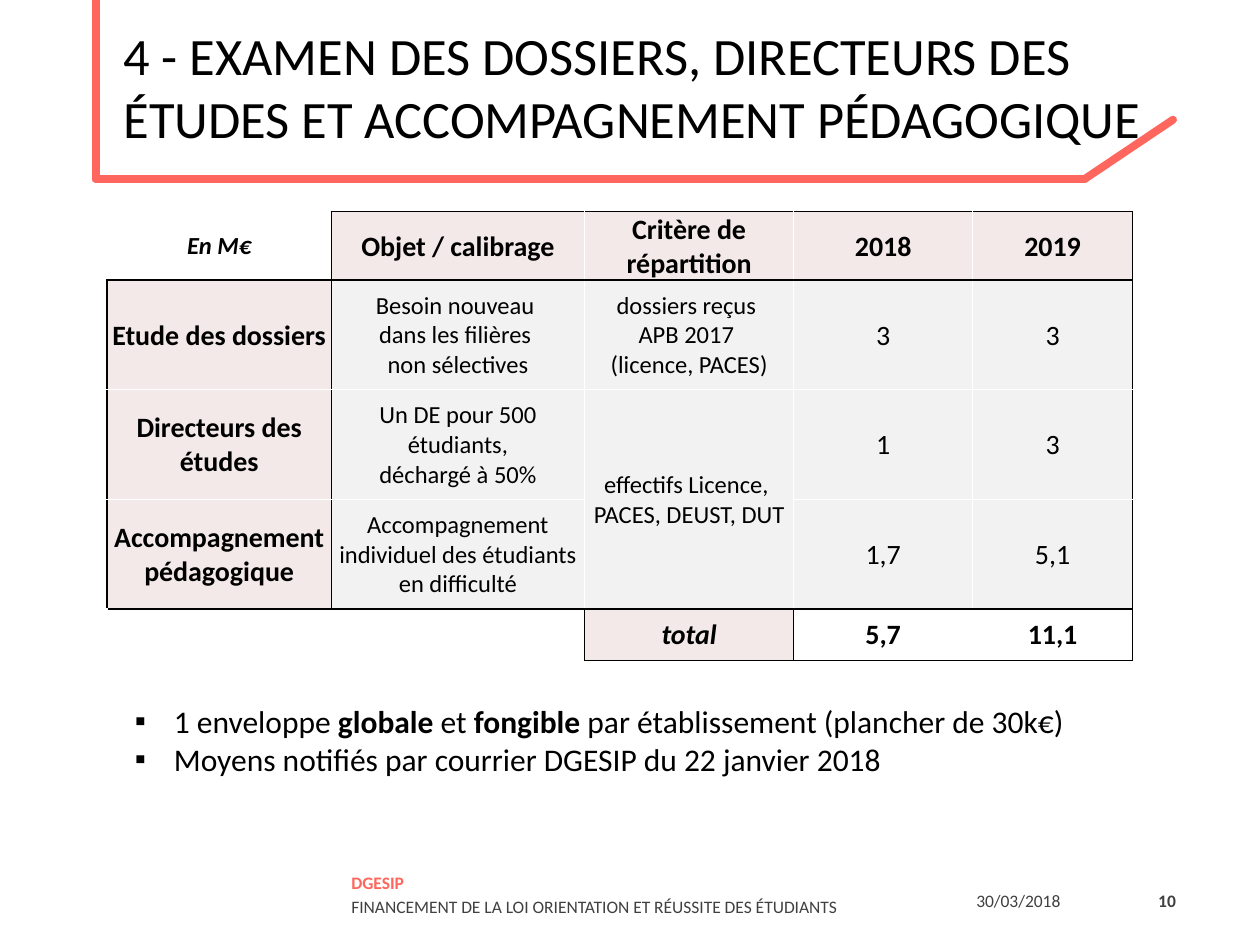
from lxml.etree import SubElement as Sub
from pptx import Presentation
from pptx.dml.color import RGBColor
from pptx.enum.shapes import MSO_CONNECTOR as Conn
from pptx.enum.text import MSO_ANCHOR as Anchor, MSO_AUTO_SIZE as Auto, PP_ALIGN as Align
from pptx.oxml.ns import qn
from pptx.util import Inches, Pt

CORAL = RGBColor(0xFF, 0x66, 0x5E)
BLACK = RGBColor(0, 0, 0)
WHITE = RGBColor(0xFF, 0xFF, 0xFF)
GREY = RGBColor(0x40, 0x40, 0x40)
ROSE = RGBColor(0xF4, 0xE9, 0xE9)
PALE = RGBColor(0xF2, 0xF2, 0xF2)

HEAD = {"size": Pt(16), "bold": True}
BODY = {"size": Pt(14), "bold": False}
NUM = {"size": Pt(16), "bold": False}
UNIT = {"size": Pt(14), "bold": True, "italic": True}
TOTAL = {"size": Pt(16), "bold": True, "italic": True}
LIST = {"size": Pt(18), "bold": False}
BOLD = {"size": Pt(18), "bold": True}
SMALL = {"size": Pt(10), "bold": False}
STRONG = {"size": Pt(10), "bold": True}

COLS = [1.78, 2.01, 1.66, 1.42, 1.27]
ROWS = [0.52, 0.87, 0.87, 0.87, 0.41]
DATA = [
    ["En M€", "Objet / calibrage", "Critère de répartition", "2018", "2019"],
    ["Etude des dossiers", "Besoin nouveau \ndans les filières \nnon sélectives",
     "dossiers reçus \nAPB 2017 \n(licence, PACES)", "3", "3"],
    ["Directeurs des études", "Un DE pour 500 étudiants,\ndéchargé à 50%",
     "effectifs Licence, \nPACES, DEUST, DUT", "1", "3"],
    ["Accompagnement pédagogique",
     "Accompagnement individuel des étudiants en difficulté", "", "1,7", "5,1"],
    ["", "", "total", "5,7", "11,1"],
]
HORIZ = ["01111", "11111", "00000", "00000", "11111", "00111"]
VERT = ["010001", "110001", "110001", "110001", "001101"]


def place(item, left, top, width, height):
    box = {"left": left, "top": top, "width": width, "height": height}
    for key, val in box.items():
        setattr(item, key, Inches(val))


def write(para, text, form, color=BLACK):
    run = para.add_run()
    run.text = text
    for key, val in {"name": "Calibri", **form}.items():
        setattr(run.font, key, val)
    run.font.color.rgb = color


def line(slide, start, end):
    bar = slide.shapes.add_connector(Conn.STRAIGHT, *map(Inches, start + end))
    bar.line.color.rgb = CORAL
    bar.line.width = Pt(4.5)
    bar.line._get_or_add_ln().set("cap", "rnd")
    Sub(bar._element.spPr, qn("a:effectLst"))


def title(slide, text):
    item = slide.shapes.title
    place(item, 0.88, 0.16, 8.62, 1.04)
    frame = item.text_frame
    frame.auto_size = Auto.NONE
    frame.vertical_anchor = Anchor.MIDDLE
    para = frame.paragraphs[0]
    para.alignment = Align.LEFT
    para.space_after = Pt(12)
    write(para, text, {"size": Pt(30)})


def bullets(slide, items):
    item = slide.placeholders[1]
    place(item, 0.97, 5.52, 7.78, 0.71)
    frame = item.text_frame
    frame.auto_size = Auto.SHAPE_TO_FIT_TEXT
    for num, runs in enumerate(items):
        para = frame.add_paragraph() if num else frame.paragraphs[0]
        para.space_before = Pt(0)
        props = para._p.get_or_add_pPr()
        props.set("marL", str(Inches(0.31)))
        props.set("indent", str(Inches(-0.31)))
        Sub(props, qn("a:buChar"), char="▪")
        for text, form in runs:
            write(para, text, form)


def label(slide, spot, rows, align=Align.LEFT, pitch=None):
    frame = slide.shapes.add_textbox(*map(Inches, spot)).text_frame
    frame.word_wrap = True
    frame.vertical_anchor = Anchor.MIDDLE
    for num, (text, form, color) in enumerate(rows):
        para = frame.add_paragraph() if num else frame.paragraphs[0]
        para.alignment = align
        para.line_spacing = pitch
        write(para, text, form, color)


def border(cell, row, col):
    end = row + (cell.span_height if cell.is_merge_origin else 1)
    last = col + (cell.span_width if cell.is_merge_origin else 1)
    sides = {"L": VERT[row][col], "R": VERT[row][last],
             "T": HORIZ[row][col], "B": HORIZ[end][col]}
    props = cell._tc.get_or_add_tcPr()
    for side, dark in sides.items():
        edge = Sub(props, qn("a:ln" + side), w=str(Pt(1)))
        fill = Sub(edge, qn("a:solidFill"))
        Sub(fill, qn("a:srgbClr"), val=str(BLACK if dark == "1" else WHITE))


def style(row, col):
    if (row, col) == (0, 0):
        return UNIT, WHITE
    if row == 4:
        return (TOTAL, ROSE) if col == 2 else (HEAD, WHITE)
    if row == 0 or col == 0:
        return HEAD, ROSE
    return (BODY if col < 3 else NUM), PALE


def fill_cell(cell, text, row, col):
    form, color = style(row, col)
    if not cell.is_spanned:
        border(cell, row, col)
    cell.fill.solid()
    cell.fill.fore_color.rgb = color
    look = {"margin_left": Inches(0.01), "margin_right": Inches(0.01),
            "margin_top": Inches(0.01), "margin_bottom": 0,
            "vertical_anchor": Anchor.MIDDLE}
    for key, val in look.items():
        setattr(cell, key, val)
    if not text:
        return
    frame = cell.text_frame
    for num, part in enumerate(text.split("\n")):
        para = frame.add_paragraph() if num else frame.paragraphs[0]
        para.alignment = Align.CENTER
        write(para, part, form)


def budget(slide):
    spot = map(Inches, (0.85, 1.68, sum(COLS), sum(ROWS)))
    table = slide.shapes.add_table(len(ROWS), len(COLS), *spot).table
    table.first_row = table.horz_banding = False
    for col, width in zip(table.columns, COLS):
        col.width = Inches(width)
    for row, height in zip(table.rows, ROWS):
        row.height = Inches(height)
    table.cell(2, 2).merge(table.cell(3, 2))
    table.cell(4, 0).merge(table.cell(4, 1))
    for row, texts in enumerate(DATA):
        for col, text in enumerate(texts):
            fill_cell(table.cell(row, col), text, row, col)


def main():
    deck = Presentation()
    deck.slide_width, deck.slide_height = Inches(10), Inches(7.5)
    slide = deck.slides.add_slide(deck.slide_layouts[1])
    path = [(0.76, 0), (0.76, 1.42), (8.61, 1.42), (9.31, 0.95)]
    for start, end in zip(path, path[1:]):
        line(slide, start, end)
    title(slide, "4 - EXAMEN DES DOSSIERS, DIRECTEURS DES ÉTUDES "
                 "ET ACCOMPAGNEMENT PÉDAGOGIQUE")
    budget(slide)
    bullets(slide, [
        [("1 enveloppe ", LIST), ("globale", BOLD), (" et ", LIST),
         ("fongible ", BOLD), ("par établissement (plancher de 30k€)", LIST)],
        [("Moyens notifiés par courrier DGESIP du 22 janvier 2018", LIST)],
    ])
    label(slide, (2.69, 6.89, 5.72, 0.4), [
        ("DGESIP", STRONG, CORAL),
        ("FINANCEMENT DE LA LOI ORIENTATION ET RÉUSSITE DES ÉTUDIANTS", SMALL, GREY),
    ], pitch=Pt(13.3))
    label(slide, (7.65, 6.95, 1.34, 0.4), [("30/03/2018", SMALL, GREY)])
    label(slide, (8.99, 6.95, 0.44, 0.4), [("10", STRONG, GREY)], Align.RIGHT)
    deck.save("out.pptx")


if __name__ == "__main__":
    main()
